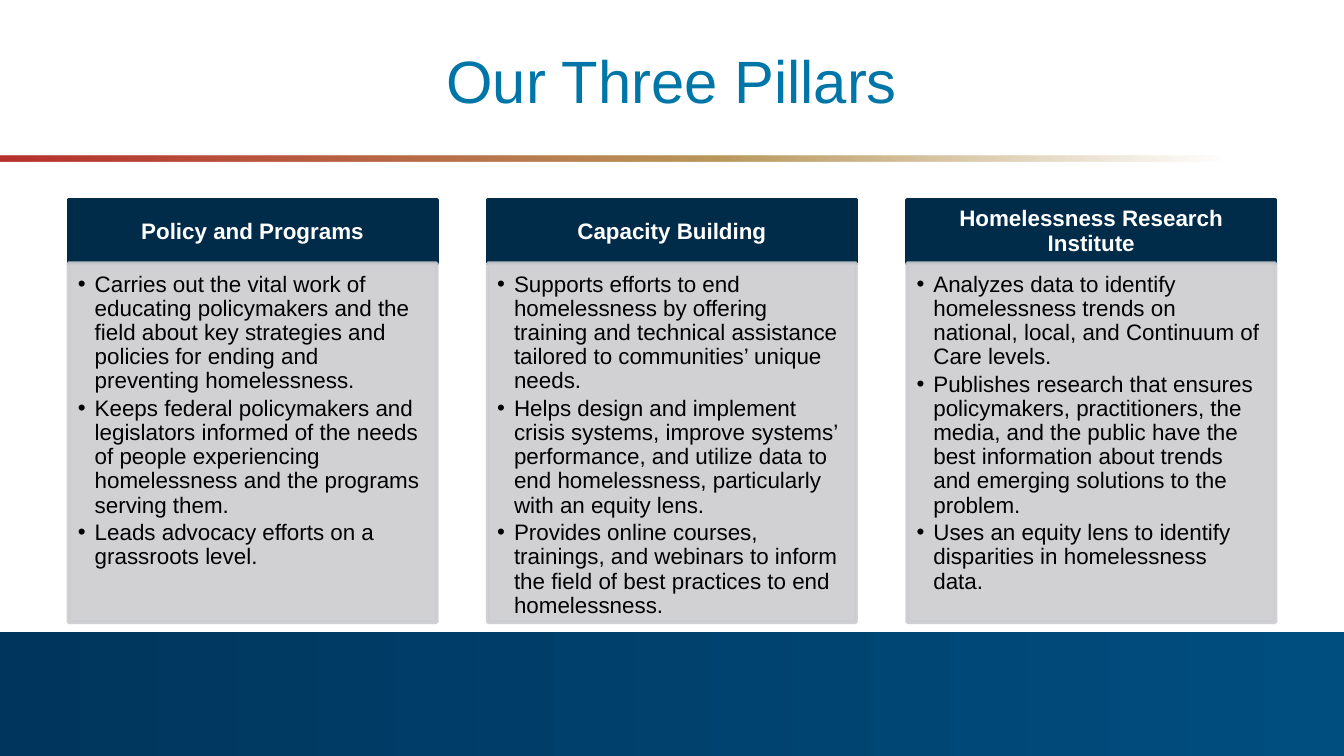
from pptx import Presentation
from pptx.dml.color import RGBColor as RGB
from pptx.enum.shapes import MSO_SHAPE as Shape
from pptx.enum.text import MSO_ANCHOR as Anchor, PP_ALIGN as Align
from pptx.oxml.ns import qn
from pptx.util import Inches, Pt
from lxml.etree import SubElement as Sub

TITLE = "Our Three Pillars"
PILLARS = [
    ("Policy and Programs", [
        "Carries out the vital work of educating policymakers and the field about key strategies and policies for ending and preventing homelessness.",
        "Keeps federal policymakers and legislators informed of the needs of people experiencing homelessness and the programs serving them.",
        "Leads advocacy efforts on a grassroots level.",
    ]),
    ("Capacity Building", [
        "Supports efforts to end homelessness by offering training and technical assistance tailored to communities’ unique needs.",
        "Helps design and implement crisis systems, improve systems’ performance, and utilize data to end homelessness, particularly with an equity lens.",
        "Provides online courses, trainings, and webinars to inform the field of best practices to end homelessness.",
    ]),
    ("Homelessness Research Institute", [
        "Analyzes data to identify homelessness trends on national, local, and Continuum of Care levels.",
        "Publishes research that ensures policymakers, practitioners, the media, and the public have the best information about trends and emerging solutions to the problem.",
        "Uses an equity lens to identify disparities in homelessness data.",
    ]),
]
THEME = {
    "font": "Arial", "big": 32, "small": 12,
    "title": "0076A8", "head": "002B49", "body": "CCCDD0",
    "light": "FFFFFF", "dark": "000000",
    "band": [(0, "00355D", 100), (100, "004E7F", 100)],
    "rule": [(0, "B7302C", 100), (53, "B9975B", 100), (91, "B9975B", 0)],
}
WIDE = 10
HIGH = WIDE * 9 / 16
WIDTH, GAP = 2.74, 0.38
PITCH = WIDTH + GAP
LEFT = (WIDE - len(PILLARS) * PITCH + GAP) / 2
TOP, HEAD, BODY = 1.49, 0.47, 2.67
BAND = 4.7


def color(name):
    return RGB.from_string(THEME[name])


def fade(node, alpha):
    Sub(node, qn("a:alpha")).set("val", str(alpha * 1000))


def add_rect(slide, *box):
    rect = slide.shapes.add_shape(Shape.RECTANGLE, *map(Inches, box))
    rect.shadow.inherit = False
    return rect


def add_blend(slide, stops, *box):
    rect = add_rect(slide, *box)
    rect.line.fill.background()
    rect.fill.gradient()
    rect.fill.gradient_angle = 0
    group = rect._element.spPr.find(qn("a:gradFill")).find(qn("a:gsLst"))
    group.clear()
    for place, tint, alpha in stops:
        stop = Sub(group, qn("a:gs"))
        stop.set("pos", str(place * 1000))
        node = Sub(stop, qn("a:srgbClr"))
        node.set("val", tint)
        if alpha < 100:
            fade(node, alpha)


def add_panel(slide, tint, *box):
    rect = add_rect(slide, *box)
    rect.fill.solid()
    rect.fill.fore_color.rgb = color(tint)
    rect.line.color.rgb = color(tint)
    rect.line.width = Pt(2)
    return rect


def set_text(shape, lines, size, tint, align, anchor, inset, bold=False):
    frame = shape.text_frame
    frame.text = "\n".join(lines)
    frame.word_wrap = True
    frame.vertical_anchor = anchor
    (frame.margin_left, frame.margin_top,
     frame.margin_right, frame.margin_bottom) = map(Inches, inset)
    for para in frame.paragraphs:
        para.alignment = align
        for run in para.runs:
            run.font.name = THEME["font"]
            run.font.size = Pt(THEME[size])
            run.font.bold = bold
            run.font.color.rgb = color(tint)
    return frame.paragraphs


def add_pillar(slide, left, name, points):
    head = add_panel(slide, "head", left, TOP, WIDTH, HEAD)
    for para in set_text(head, [name], "small", "light", Align.CENTER,
                         Anchor.MIDDLE, (0.09, 0.05, 0.09, 0.05), True):
        para.line_spacing = 0.9
    body = add_panel(slide, "body", left, TOP + HEAD, WIDTH, BODY)
    for node in body._element.spPr.iter(qn("a:srgbClr")):
        fade(node, 90)
    for para in set_text(body, points, "small", "dark", Align.LEFT,
                         Anchor.TOP, (0.07, 0.07, 0.11, 0.1)):
        para.line_spacing = 0.9
        para.space_after = Pt(1.8)
        props = para._p.get_or_add_pPr()
        props.set("marL", str(Pt(9)))
        props.set("indent", str(-Pt(9)))
        Sub(props, qn("a:buFont")).set("typeface", THEME["font"])
        Sub(props, qn("a:buChar")).set("char", "•")


def main():
    deck = Presentation()
    deck.slide_width, deck.slide_height = Inches(WIDE), Inches(HIGH)
    slide = deck.slides.add_slide(deck.slide_layouts[6])
    add_blend(slide, THEME["band"], 0, BAND, WIDE, HIGH - BAND)
    add_blend(slide, THEME["rule"], 0, 1.16, WIDE, 0.04)
    title = slide.shapes.add_textbox(*map(Inches, (0.5, 0.22, 9, 0.69)))
    set_text(title, [TITLE], "big", "title", Align.CENTER,
             Anchor.BOTTOM, (0.1, 0.05, 0.1, 0.05))
    for index, (name, points) in enumerate(PILLARS):
        add_pillar(slide, LEFT + index * PITCH, name, points)
    deck.save("out.pptx")


if __name__ == "__main__":
    main()
